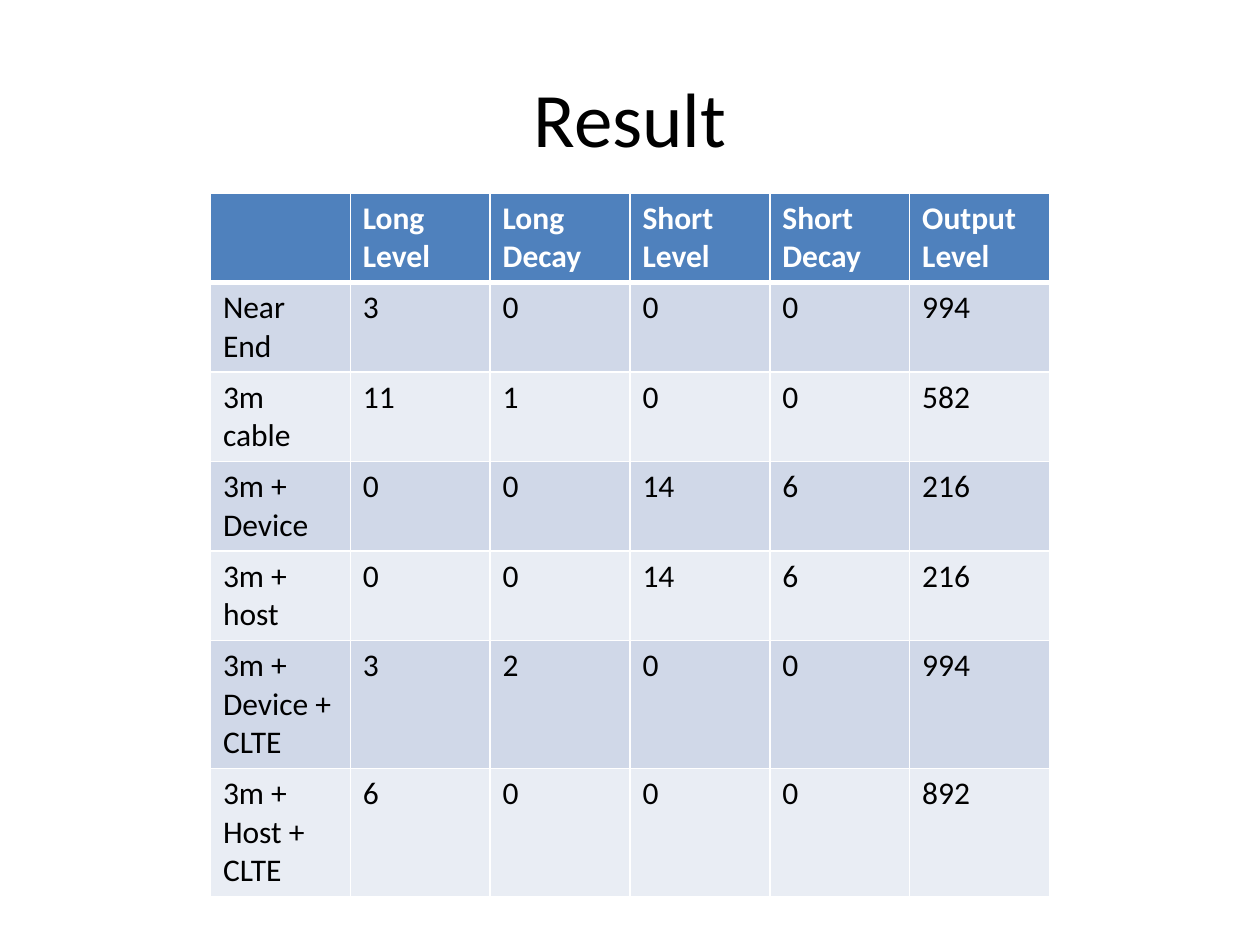
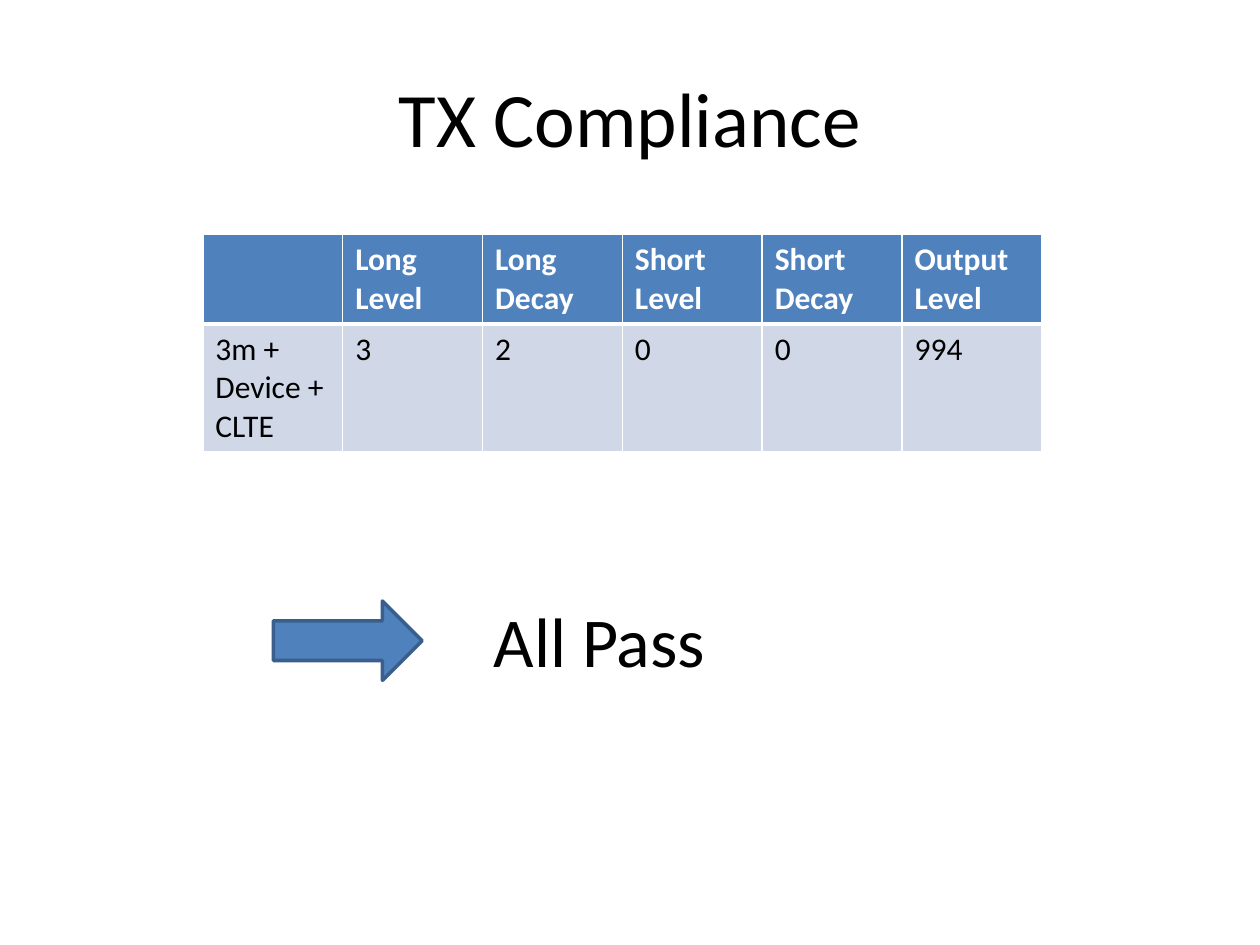
import pptx
import pptx.util
import pptx.dml.color
import pptx.enum.shapes
import pptx.enum.text
import pptx.oxml
import pptx.oxml.ns

Inches, Pt = pptx.util.Inches, pptx.util.Pt
RGBColor = pptx.dml.color.RGBColor

BLACK = RGBColor(0x00, 0x00, 0x00)
WHITE = RGBColor(0xFF, 0xFF, 0xFF)
BLUE = RGBColor(0x4F, 0x81, 0xBD)
DARK_BLUE = RGBColor(0x3A, 0x5F, 0x8C)
BANDS = [RGBColor(0xD0, 0xD8, 0xE8), RGBColor(0xE9, 0xED, 0xF4)]
FONT = "Calibri"

HEADER = ["", "Long\nLevel", "Long\nDecay", "Short\nLevel", "Short\nDecay", "Output\nLevel"]
DEVICE_CLTE = ["3m +\nDevice +\nCLTE", "3", "2", "0", "0", "994"]
RESULTS = [
    ["Near End", "3", "0", "0", "0", "994"],
    ["3m cable", "11", "1", "0", "0", "582"],
    ["3m +\nDevice", "0", "0", "14", "6", "216"],
    ["3m + host", "0", "0", "14", "6", "216"],
    DEVICE_CLTE,
    ["3m +\nHost +\nCLTE", "6", "0", "0", "0", "892"],
]
COL_WIDTH, ROW_HEIGHT = 1.11, 0.41

# title, table rows, table left, top, height
SLIDES = [
    ("Result", RESULTS, 1.67, 1.53, 5.5),
    ("TX Compliance", [DEVICE_CLTE], 1.61, 1.86, 1.7),
]


def write(tf, text, size, color=BLACK, bold=False, align=None):
    """Fill a text frame with one paragraph per line of text."""
    for i, line in enumerate(text.split("\n")):
        p = tf.paragraphs[0] if i == 0 else tf.add_paragraph()
        p.alignment = align
        r = p.add_run()
        r.text = line
        r.font.name, r.font.size, r.font.bold = FONT, Pt(size), bold
        r.font.color.rgb = color


def add_borders(cell, top, bottom):
    """Draw white borders; top and bottom are widths in points."""
    for side, width in (("L", 1), ("R", 1), ("T", top), ("B", bottom)):
        cell._tc.get_or_add_tcPr().append(pptx.oxml.parse_xml(
            f'<a:ln{side} {pptx.oxml.ns.nsdecls("a")} w="{Pt(width)}">'
            f'<a:solidFill><a:srgbClr val="{WHITE}"/></a:solidFill></a:ln{side}>'))


prs = pptx.Presentation()
prs.slide_width, prs.slide_height = Inches(10), Inches(7.5)

for title, body, left, top, height in SLIDES:
    s = prs.slides.add_slide(prs.slide_layouts[5])
    sp = s.shapes.title
    sp.left, sp.top, sp.width, sp.height = Inches(0.5), Inches(0.3), Inches(9), Inches(1.25)
    sp.text_frame.vertical_anchor = pptx.enum.text.MSO_ANCHOR.MIDDLE
    write(sp.text_frame, title, 44, align=pptx.enum.text.PP_ALIGN.CENTER)

    rows = [HEADER] + body
    frame = s.shapes.add_table(len(rows), len(HEADER), Inches(left), Inches(top),
                               Inches(COL_WIDTH * len(HEADER)), Inches(height))
    for row in frame.table.rows:
        row.height = Inches(ROW_HEIGHT)
    frame.height = Inches(height)
    for i, values in enumerate(rows):
        is_header = i == 0
        for j, value in enumerate(values):
            cell = frame.table.cell(i, j)
            add_borders(cell, 3 if i == 1 else 1, 3 if is_header else 1)
            cell.fill.solid()
            cell.fill.fore_color.rgb = BLUE if is_header else BANDS[(i - 1) % 2]
            write(cell.text_frame, value, 18, WHITE if is_header else BLACK, is_header)

# Verdict under the compliance table
arrow = s.shapes.add_shape(pptx.enum.shapes.MSO_SHAPE.RIGHT_ARROW,
                           Inches(2.17), Inches(4.77), Inches(1.18), Inches(0.63))
arrow.shadow.inherit = False
arrow.fill.solid()
arrow.fill.fore_color.rgb = BLUE
arrow.line.color.rgb = DARK_BLUE
arrow.line.width = Pt(2)

verdict = s.shapes.add_textbox(Inches(3.82), Inches(4.69), Inches(4.57), Inches(0.77))
verdict.text_frame.word_wrap = True
verdict.text_frame.auto_size = pptx.enum.text.MSO_AUTO_SIZE.SHAPE_TO_FIT_TEXT
write(verdict.text_frame, "All Pass", 40)

prs.save("out.pptx")
